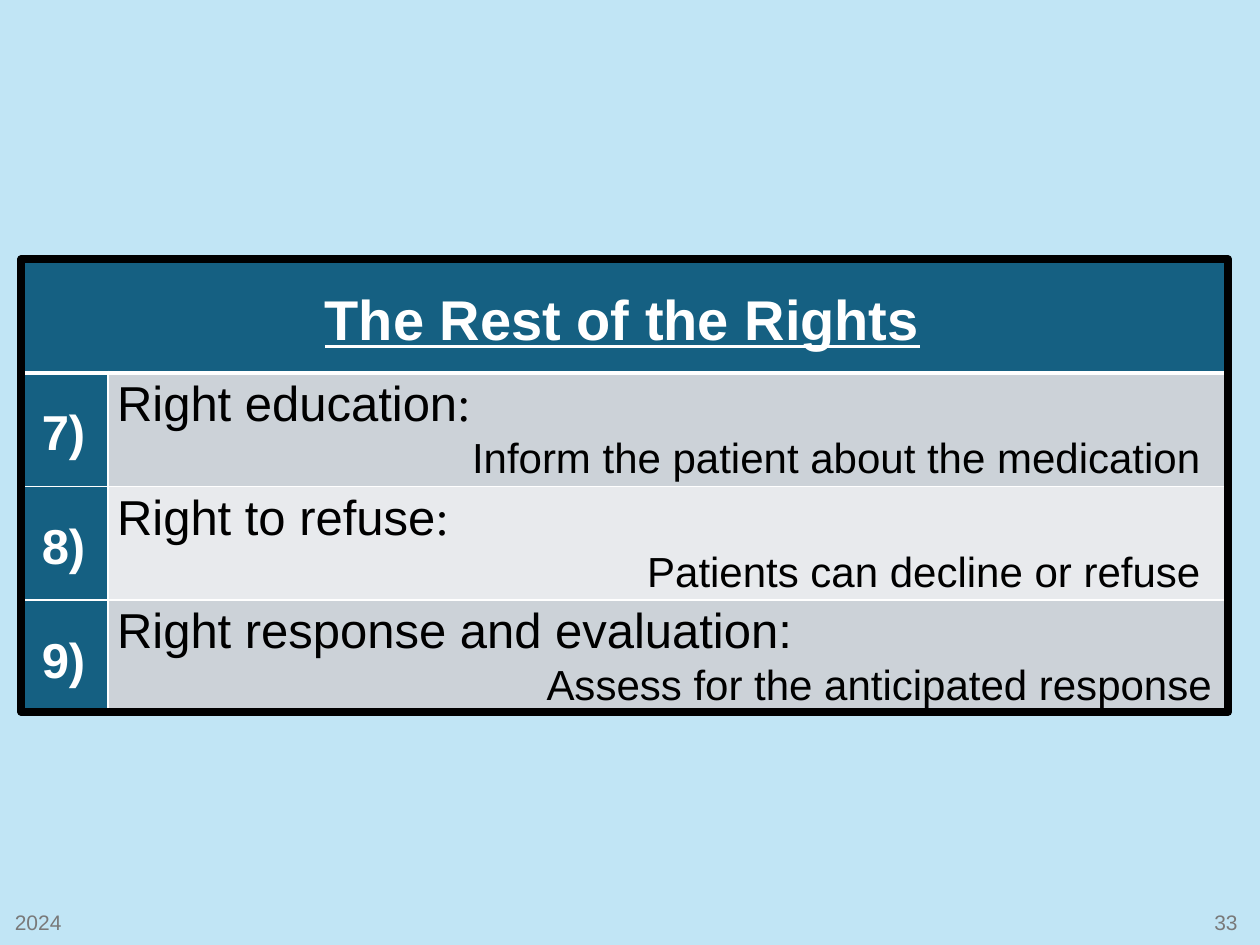
from dataclasses import dataclass
from lxml.etree import SubElement
from pptx import Presentation
from pptx.dml.color import RGBColor
from pptx.enum.shapes import MSO_SHAPE
from pptx.enum.text import MSO_ANCHOR, PP_ALIGN
from pptx.oxml.ns import qn
from pptx.util import Cm, Pt


@dataclass(frozen=True)
class Theme:
    sky: str = "C1E5F5"
    teal: str = "156082"
    white: str = "FFFFFF"
    black: str = "000000"
    gray: str = "797979"
    bands: tuple = ("CCD2D8", "E8EAED")
    font: str = "Arial"
    serif: str = "Times New Roman"
    title: int = 32
    head: int = 28
    body: int = 24
    foot: int = 12


@dataclass(frozen=True)
class Right:
    mark: str
    name: str
    note: str
    colon: str
    stop: float


@dataclass(frozen=True)
class Footer:
    text: str
    left: float
    align: PP_ALIGN


LOOK = Theme()
RIGHTS = (
    Right("7)", "Right education", "Inform the patient about the medication", LOOK.serif, 21.84),
    Right("8)", "Right to refuse", "Patients can decline or refuse", LOOK.serif, 21.84),
    Right("9)", "Right response and evaluation", "Assess for the anticipated response", LOOK.font, 22.07),
)
FOOTERS = (
    Footer("2024", 0.05, PP_ALIGN.LEFT),
    Footer("33", 19.48, PP_ALIGN.RIGHT),
)


def color(code: str) -> RGBColor:
    return RGBColor.from_string(code)


def write(para, text: str, *, size: int, ink: str, font: str = LOOK.font,
          bold: bool = False, under: bool = False, align=None,
          line=None, after=None) -> None:
    run = para.add_run()
    run.text = text
    face = run.font
    face.name, face.size, face.bold, face.underline = font, Pt(size), bold, under
    face.color.rgb = color(ink)
    if align is not None:
        para.alignment = align
    if line is not None:
        para.line_spacing = line
    if after is not None:
        para.space_after = Pt(after)


def tab(para, stop: float) -> None:
    props = para._p.get_or_add_pPr()
    stops = SubElement(props, qn("a:tabLst"))
    SubElement(stops, qn("a:tab"), pos=str(Cm(stop)), algn="r")


def border(cell, **wide: float) -> None:
    props = cell._tc.get_or_add_tcPr()
    for index, side in enumerate(("L", "R", "T", "B")):
        width = Pt(wide.get(side, 1))
        edge = props.makeelement(qn(f"a:ln{side}"), {"w": str(width)})
        fill = SubElement(edge, qn("a:solidFill"))
        SubElement(fill, qn("a:srgbClr"), val=LOOK.white)
        props.insert(index, edge)


def dress(cell, fill: str, **wide: float) -> None:
    cell.fill.solid()
    cell.fill.fore_color.rgb = color(fill)
    cell.vertical_anchor = MSO_ANCHOR.MIDDLE
    cell.margin_left = cell.margin_right = Cm(0.18)
    cell.margin_top = cell.margin_bottom = 0
    border(cell, **wide)


def label(cell, text: str, size: int, under: bool = False) -> None:
    write(cell.text_frame.paragraphs[0], text, size=size, ink=LOOK.white, bold=True,
          under=under, align=PP_ALIGN.CENTER, line=1.15, after=3)


def detail(cell, item: Right) -> None:
    first = cell.text_frame.paragraphs[0]
    write(first, item.name, size=LOOK.head, ink=LOOK.black, after=2)
    write(first, ":", size=LOOK.head, ink=LOOK.black, font=item.colon)
    second = cell.text_frame.add_paragraph()
    write(second, "\t" + item.note, size=LOOK.body, ink=LOOK.black, after=2)
    tab(second, item.stop)


def chart_rights(slide) -> None:
    grid = slide.shapes.add_table(len(RIGHTS) + 1, 2, Cm(0.38), Cm(5.23),
                                  Cm(24.33), Cm(9.17)).table
    for col, width in zip(grid.columns, (1.8, 22.53)):
        col.width = Cm(width)
    for row in grid.rows:
        row.height = Cm(2.29)
    top = grid.cell(0, 0)
    top.merge(grid.cell(0, 1))
    for col in range(2):
        dress(grid.cell(0, col), LOOK.teal, B=3)
    label(top, "The Rest of the Rights", LOOK.title, under=True)
    for row, item in enumerate(RIGHTS, 1):
        mark, body = grid.cell(row, 0), grid.cell(row, 1)
        edge = 3 if row == 1 else 1
        dress(mark, LOOK.teal, T=edge)
        dress(body, LOOK.bands[(row - 1) % 2], T=edge)
        label(mark, item.mark, LOOK.head)
        detail(body, item)


def frame(slide) -> None:
    box = slide.shapes.add_shape(MSO_SHAPE.RECTANGLE, Cm(0.43), Cm(5.23),
                                 Cm(24.33), Cm(9.12))
    box.shadow.inherit = False
    box.fill.background()
    box.line.color.rgb = color(LOOK.black)
    box.line.width = Pt(4.5)


def foot(slide, item: Footer) -> None:
    text = slide.shapes.add_textbox(Cm(item.left), Cm(18.34), Cm(5.72), Cm(0.51)).text_frame
    text.word_wrap = True
    text.vertical_anchor = MSO_ANCHOR.MIDDLE
    write(text.paragraphs[0], item.text, size=LOOK.foot, ink=LOOK.gray, align=item.align)


def main() -> None:
    deck = Presentation()
    deck.slide_width, deck.slide_height = Cm(25.4), Cm(19.05)
    slide = deck.slides.add_slide(deck.slide_layouts[6])
    slide.background.fill.solid()
    slide.background.fill.fore_color.rgb = color(LOOK.sky)
    for item in FOOTERS:
        foot(slide, item)
    chart_rights(slide)
    frame(slide)
    deck.save("out.pptx")


if __name__ == "__main__":
    main()
